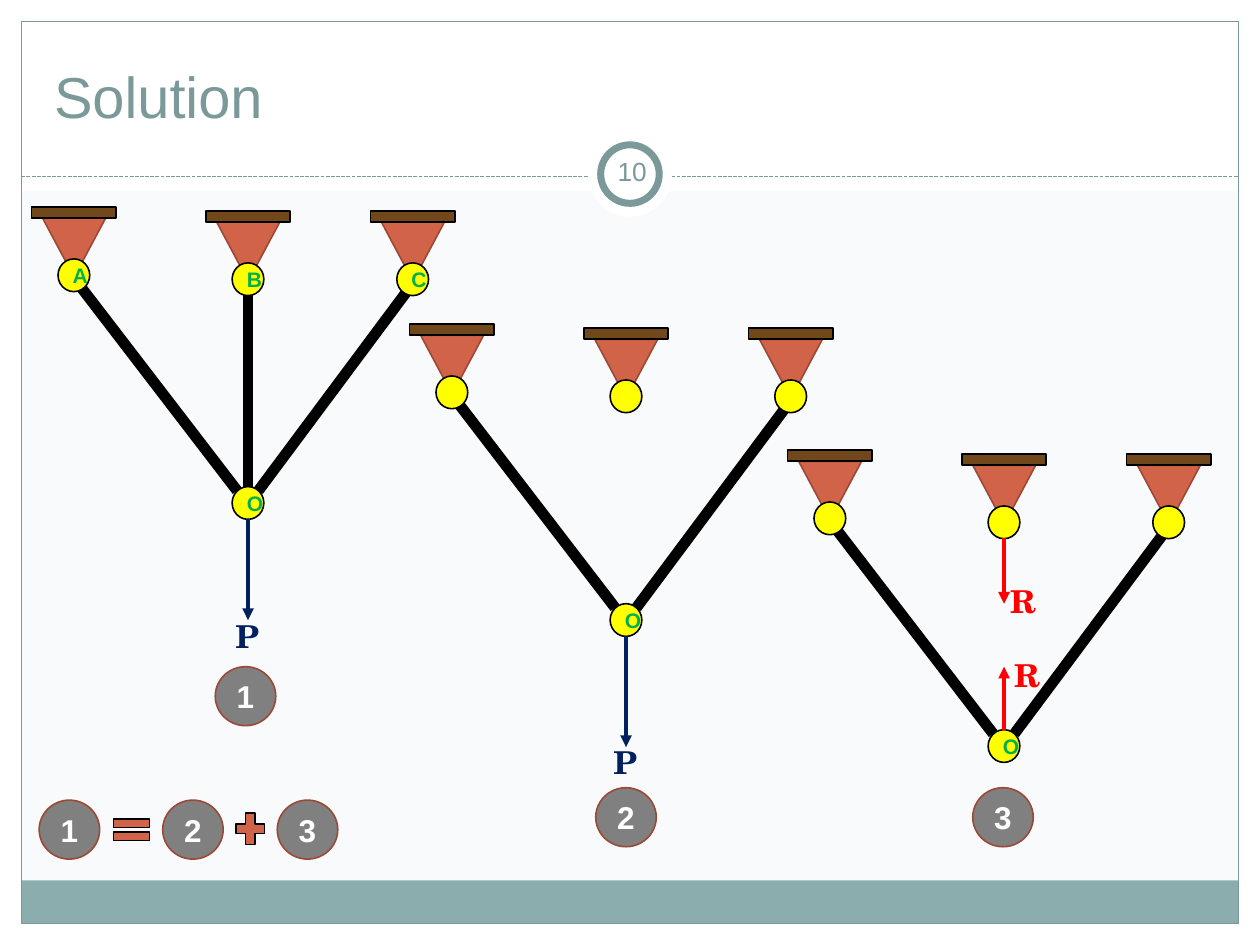
from lxml.etree import SubElement
from pptx import Presentation
from pptx.dml.color import RGBColor
from pptx.enum.dml import MSO_LINE_DASH_STYLE as DASH
from pptx.enum.shapes import MSO_CONNECTOR, MSO_SHAPE as SHAPE
from pptx.enum.text import MSO_ANCHOR as ANCHOR, PP_ALIGN as ALIGN
from pptx.oxml.ns import qn
from pptx.util import Cm, Pt

C = {"white": "FFFFFF", "paper": "F8FAFB", "teal": "7C999A", "band": "8CADAE",
     "clay": "D16349", "rust": "9B4936", "beam": "71481C", "pin": "FFFF00",
     "black": "000000", "green": "00B050", "navy": "002060", "red": "FF0000",
     "grey": "808080"}
SANS, SERIF = "Arial", "TeX Gyre Schola"
MID = 4.36
SUPPORTS = ((0, 0), (3.51, 0.08), (6.83, 0.08))
BARS = {"A": (0.84, 1.42, 4.14, 5.72), "B": (MID, 1.52, MID, 5.64),
        "C": (7.7, 1.52, 4.57, 5.72)}


def rgb(name):
    """Return the named palette colour."""
    return RGBColor.from_string(C[name])


def write(shape, text, size, color, font=SANS, bold=True, align=ALIGN.CENTER,
          anchor=ANCHOR.MIDDLE):
    """Put one formatted run into a shape."""
    tf = shape.text_frame
    tf.word_wrap = True
    tf.vertical_anchor = anchor
    p = tf.paragraphs[0]
    p.alignment = align
    r = p.add_run()
    r.text = text
    r.font.name, r.font.size, r.font.bold = font, Pt(size), bold
    r.font.color.rgb = rgb(color)


def add_shape(shapes, kind, x, y, w, h, fill=None, line=None, width=0.9):
    """Add a flat preset shape."""
    sp = shapes.add_shape(kind, Cm(x), Cm(y), Cm(w), Cm(h))
    sp.shadow.inherit = False
    if fill:
        sp.fill.solid()
        sp.fill.fore_color.rgb = rgb(fill)
    else:
        sp.fill.background()
    if line:
        sp.line.color.rgb = rgb(line)
        sp.line.width = Pt(width)
    else:
        sp.line.fill.background()
    return sp


def add_text(shapes, x, y, w, h, text, size, color, **style):
    """Add a text box holding one run."""
    box = shapes.add_textbox(Cm(x), Cm(y), Cm(w), Cm(h))
    write(box, text, size, color, **style)
    return box


def add_line(shapes, x1, y1, x2, y2, color, width, arrow=False):
    """Add a straight line, with an arrowhead at its end if asked."""
    cn = shapes.add_connector(MSO_CONNECTOR.STRAIGHT, Cm(x1), Cm(y1), Cm(x2), Cm(y2))
    cn.line.color.rgb = rgb(color)
    cn.line.width = Pt(width)
    if arrow:
        SubElement(cn.line._get_or_add_ln(), qn("a:tailEnd"), type="triangle")
    SubElement(cn._element.spPr, qn("a:effectLst"))
    return cn


def frame(shapes, w, h):
    """Draw the margins, header, footer band and border."""
    m = 0.43
    for x, y, bw, bh in ((0, h - m, w, m), (0, 0, w, 3.86), (0, 0, m, h), (w - m, 0, m, h)):
        add_shape(shapes, SHAPE.RECTANGLE, x, y, bw, bh, "white")
    add_shape(shapes, SHAPE.RECTANGLE, m, 17.75, w - 2 * m, 0.87, "band")
    add_shape(shapes, SHAPE.RECTANGLE, m, m, w - 2 * m, h - 2 * m, None, "teal", 0.75)
    add_line(shapes, m, 3.56, w - m, 3.56, "teal", 0.75).line.dash_style = DASH.SQUARE_DOT


def header(shapes, title, number):
    """Draw the title and the ringed page number."""
    add_shape(shapes, SHAPE.OVAL, 11.85, 2.67, 1.7, 1.7, "white")
    add_shape(shapes, SHAPE.OVAL, 12.11, 2.92, 1.18, 1.18, "white", "teal", 4)
    add_text(shapes, 0.84, 0.64, 23.7, 2.11, title, 33, "teal", bold=False,
             align=ALIGN.LEFT, anchor=ANCHOR.BOTTOM)
    box = add_text(shapes, 12.11, 2.84, 1.27, 1.22, number, 15, "teal", bold=False)
    tf = box.text_frame
    tf.margin_left = tf.margin_right = tf.margin_top = tf.margin_bottom = Cm(0.13)


def pin(shapes, x, y, label=""):
    """Draw a hinge, with its letter if it has one."""
    sp = add_shape(shapes, SHAPE.OVAL, x, y, 0.64, 0.66, "pin", "black")
    if label:
        write(sp, label, 12, "green")


def support(shapes, x, y, label=""):
    """Draw a ceiling support with its hinge."""
    cone = add_shape(shapes, SHAPE.ISOSCELES_TRIANGLE, x + 0.22, y + 0.23, 1.27, 1.19,
                     "clay", "rust")
    cone._element.spPr.xfrm.set("flipV", "1")
    pin(shapes, x + 0.53, y + 1.05, label)
    add_shape(shapes, SHAPE.RECTANGLE, x, y, 1.7, 0.23, "beam", "black")


def truss(s, x, y, bars, forces, labels=("", "", "")):
    """Draw one truss; forces hold label, colour, arrow ends and label place."""
    shapes = s.shapes.add_group_shape().shapes
    for bar in bars:
        x1, y1, x2, y2 = BARS[bar]
        add_line(shapes, x + x1, y + y1, x + x2, y + y2, "black", 6.25)
    for (dx, dy), label in zip(SUPPORTS, labels):
        support(shapes, x + dx, y + dy, label)
    pin(shapes, x + MID - 0.32, y + 5.64, "O")
    for text, color, start, end, tx, ty in forces:
        add_line(shapes, x + MID, y + start, x + MID, y + end, color, 2.25, True)
        add_text(shapes, x + tx, y + ty, 1.57, 1.02, text, 18, color, font=SERIF,
                 anchor=ANCHOR.TOP)


def badge(shapes, x, y, text):
    """Draw a numbered disc."""
    write(add_shape(shapes, SHAPE.OVAL, x, y, 1.22, 1.19, "grey", "rust"), text, 18, "white")


def equation(s, x, y):
    """Draw the superposition of the numbered cases."""
    shapes = s.shapes.add_group_shape().shapes
    for text, dx in (("1", 0), ("2", 2.49), ("3", 4.8)):
        badge(shapes, x + dx, y, text)
    add_shape(shapes, SHAPE.MATH_PLUS, x + 3.86, y + 0.15, 0.79, 0.86, "clay", "black")
    add_shape(shapes, SHAPE.MATH_EQUAL, x + 1.37, y + 0.23, 0.99, 0.74, "clay", "black")


def main():
    """Build the slide and save it."""
    prs = Presentation()
    prs.slide_width, prs.slide_height = Cm(25.4), Cm(19.05)
    s = prs.slides.add_slide(prs.slide_layouts[6])
    s.background.fill.solid()
    s.background.fill.fore_color.rgb = rgb("paper")
    frame(s.shapes, 25.4, 19.05)
    header(s.shapes, "Solution", "10")
    truss(s, 0.64, 4.17, "ABC", [("P", "navy", 6.3, 8.33, 3.56, 8.15)], "ABC")
    truss(s, 8.26, 6.53, "AC", [("P", "navy", 6.3, 8.53, 3.56, 8.33)])
    truss(s, 15.88, 9.07, "AC", [("R", "red", 1.78, 3.1, 3.96, 2.54),
                                 ("R", "red", 5.64, 4.37, 4.04, 4.04)])
    for text, x, y in (("1", 4.34, 13.44), ("2", 12.01, 15.88), ("3", 19.61, 15.88)):
        badge(s.shapes, x, y, text)
    equation(s, 0.79, 16.13)
    prs.save("out.pptx")


if __name__ == "__main__":
    main()
